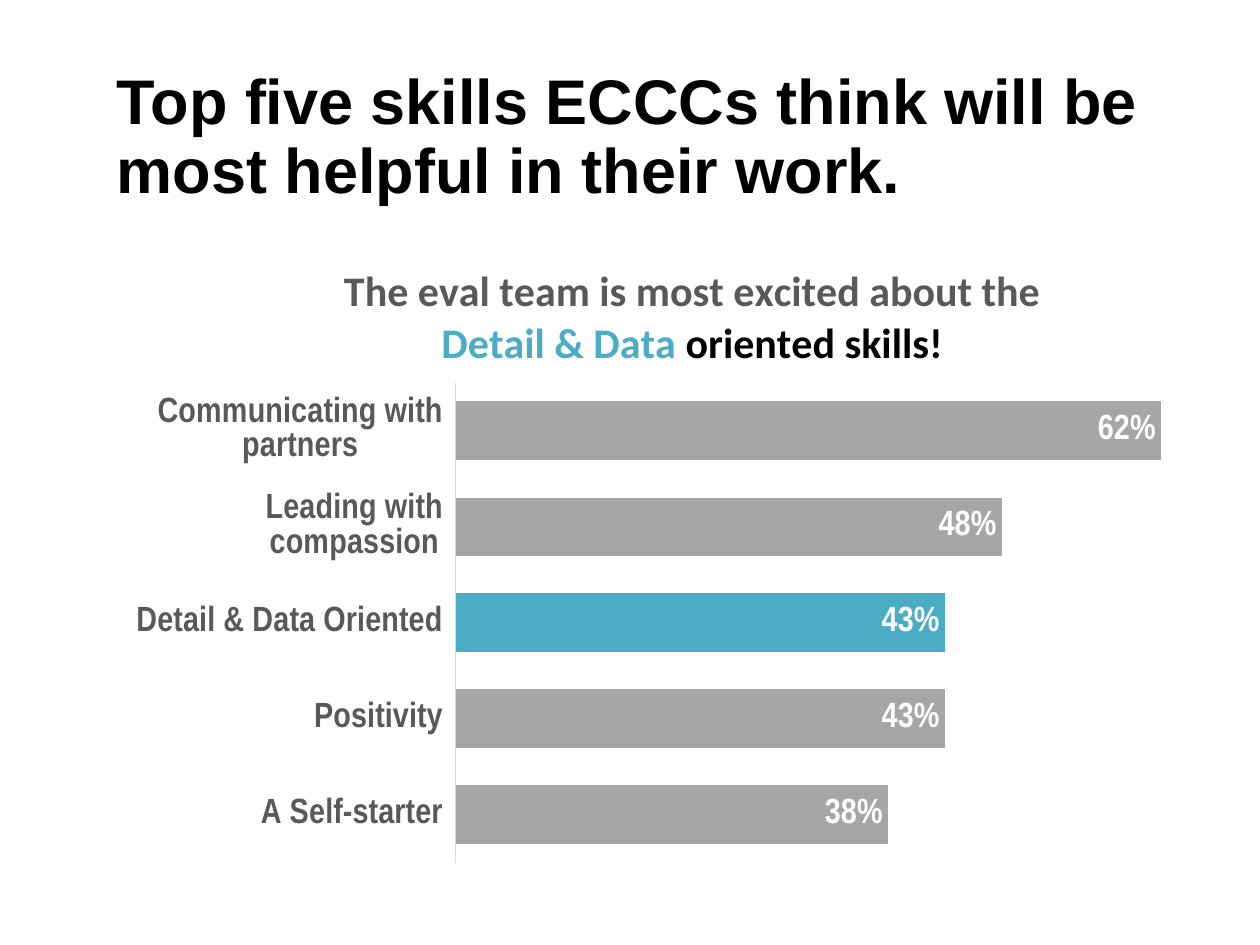
from lxml.etree import SubElement
from pptx import Presentation
from pptx.chart.data import CategoryChartData
from pptx.dml.color import RGBColor
from pptx.enum.chart import XL_CHART_TYPE, XL_LABEL_POSITION, XL_TICK_LABEL_POSITION, XL_TICK_MARK
from pptx.enum.text import MSO_ANCHOR
from pptx.oxml import parse_xml
from pptx.oxml.ns import nsdecls, qn
from pptx.util import Inches, Pt

BLACK = RGBColor(0x00, 0x00, 0x00)
WHITE = RGBColor(0xFF, 0xFF, 0xFF)
DARK = RGBColor(0x59, 0x59, 0x59)
GREY = RGBColor(0xA6, 0xA6, 0xA6)
PALE = RGBColor(0xD9, 0xD9, 0xD9)
TEAL = RGBColor(0x4B, 0xAC, 0xC6)

SKILLS = {
    "A Self-starter": 0.38,
    "Positivity": 0.43,
    "Detail & Data Oriented": 0.43,
    "Leading with compassion": 0.48,
    "Communicating with partners": 0.62,
}
FOCUS = "Detail & Data Oriented"


def style(font, name, size, color, bold=True):
    font.name, font.size, font.bold = name, Pt(size), bold
    font.color.rgb = color


def write(para, text, name="Calibri", size=24, color=BLACK):
    run = para.add_run()
    run.text = text
    style(run.font, name, size, color)


def place(node, index, **parts):
    for old in node.findall(qn("c:layout")):
        node.remove(old)
    layout = parse_xml(f"<c:layout {nsdecls('c')}><c:manualLayout/></c:layout>")
    for tag, value in parts.items():
        SubElement(layout[0], qn(f"c:{tag}")).set("val", str(value))
    node.insert(index, layout)


class Deck:
    """Holds the chart style and the current slide."""

    def __init__(self, show):
        self.label = "Arial Narrow"
        self.slide = show.slides.add_slide(show.slide_layouts[6])

    def title(self, text, left, top, width, height):
        box = self.slide.shapes.add_textbox(Inches(left), Inches(top), Inches(width), Inches(height))
        frame = box.text_frame
        frame.word_wrap = True
        frame.vertical_anchor = MSO_ANCHOR.BOTTOM
        frame.margin_top = frame.margin_bottom = 0
        para = frame.paragraphs[0]
        para.line_spacing = 0.9
        write(para, text, name="Arial", size=36)

    def chart(self, left, top, width, height):
        data = CategoryChartData(number_format="0%")
        data.categories = list(SKILLS)
        data.add_series("Series 1", list(SKILLS.values()))
        chart = self.slide.shapes.add_chart(
            XL_CHART_TYPE.BAR_CLUSTERED, Inches(left), Inches(top), Inches(width), Inches(height), data
        ).chart
        style(chart.font, "Calibri", 10, BLACK, bold=False)
        chart.has_legend = False
        self.bars(chart.plots[0])
        self.axes(chart)
        self.head(chart)
        area = chart.element.find(f".//{qn('c:plotArea')}")
        place(area, 0, layoutTarget="inner", xMode="edge", yMode="edge", x=0.29, y=0.23, w=0.69, h=0.75)

    def bars(self, plot):
        plot.gap_width = 64
        plot.vary_by_categories = False
        series = plot.series[0]
        focus = series.points[list(SKILLS).index(FOCUS)]
        for item, color in ((series, GREY), (focus, TEAL)):
            item.format.fill.solid()
            item.format.fill.fore_color.rgb = color
        labels = series.data_labels
        labels.show_value = True
        labels.position = XL_LABEL_POSITION.INSIDE_END
        labels.number_format, labels.number_format_is_linked = "0%", False
        style(labels.font, self.label, 20, WHITE)

    def axes(self, chart):
        axis = chart.category_axis
        axis.major_tick_mark = axis.minor_tick_mark = XL_TICK_MARK.NONE
        axis.tick_label_position = XL_TICK_LABEL_POSITION.LOW
        style(axis.tick_labels.font, self.label, 20, DARK)
        axis.format.line.color.rgb = PALE
        axis.format.line.width = Pt(0.75)
        scale = chart.value_axis
        scale.minimum_scale, scale.maximum_scale = 0, 0.7
        scale.has_major_gridlines = False
        scale.visible = False

    def head(self, chart):
        chart.has_title = True
        title = chart.chart_title
        title.include_in_layout = False
        frame = title.text_frame
        write(frame.paragraphs[0], "The eval team is most excited about the", color=DARK)
        para = frame.add_paragraph()
        write(para, "Detail & Data", color=TEAL)
        write(para, " oriented skills!")
        place(title.element, 1, xMode="edge", yMode="edge", x=0.19, y=0.04)


def main():
    show = Presentation()
    show.slide_width, show.slide_height = Inches(10), Inches(7.5)
    deck = Deck(show)
    deck.title("Top five skills ECCCs think will be most helpful in their work.", 0.83, 0.15, 9.04, 1.49)
    deck.chart(0.96, 1.87, 9.16, 5.08)
    show.save("out.pptx")


if __name__ == "__main__":
    main()
